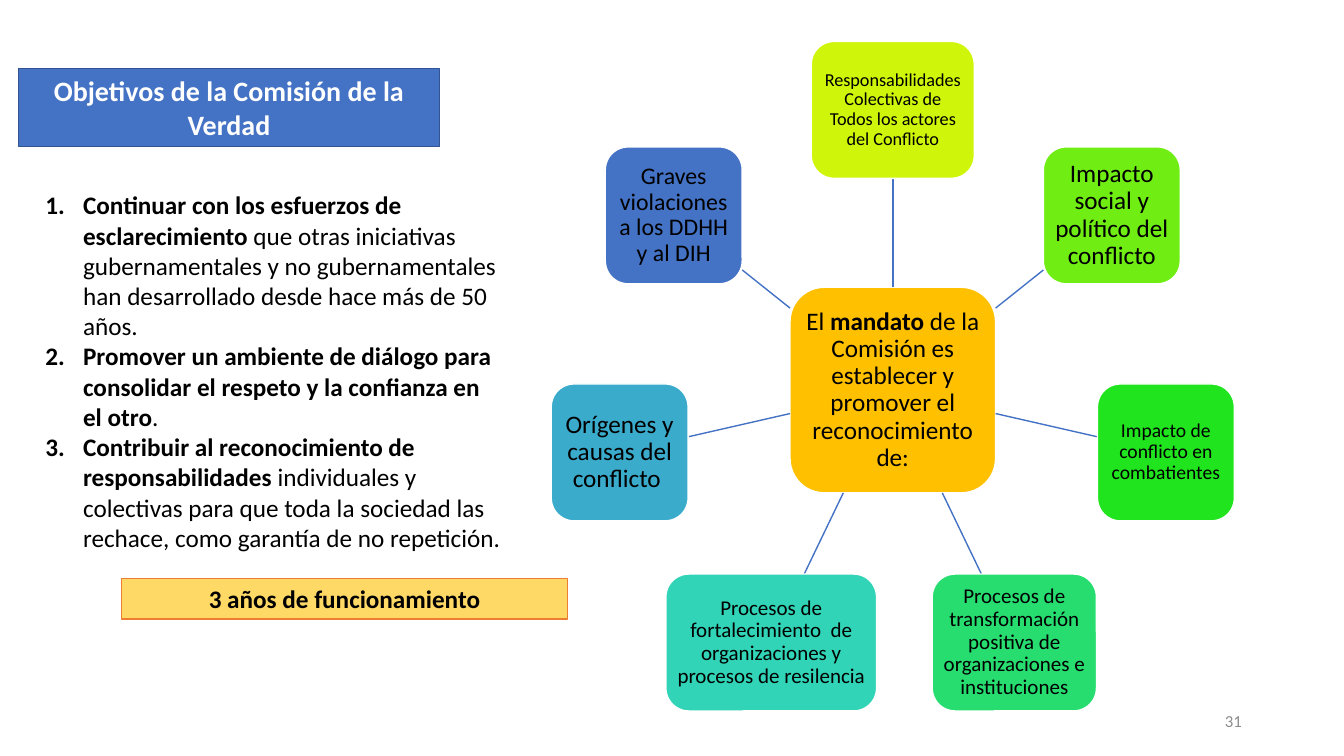
import math

import pptx
import pptx.dml.color
import pptx.enum.shapes
import pptx.enum.text
import pptx.oxml
import pptx.oxml.ns
import pptx.util

Cm = pptx.util.Cm
Pt = pptx.util.Pt
RGBColor = pptx.dml.color.RGBColor
MSO_SHAPE = pptx.enum.shapes.MSO_SHAPE
MSO_CONNECTOR = pptx.enum.shapes.MSO_CONNECTOR
MSO_ANCHOR = pptx.enum.text.MSO_ANCHOR
PP_ALIGN = pptx.enum.text.PP_ALIGN

BLACK = RGBColor(0x00, 0x00, 0x00)
WHITE = RGBColor(0xFF, 0xFF, 0xFF)
GRAY = RGBColor(0x8C, 0x8C, 0x8C)
BLUE = RGBColor(0x44, 0x72, 0xC4)
DARK_BLUE = RGBColor(0x32, 0x54, 0x91)
ORANGE = RGBColor(0xED, 0x7D, 0x31)
PALE_GOLD = RGBColor(0xFF, 0xD9, 0x66)
GOLD = RGBColor(0xFF, 0xC0, 0x00)
LIME = RGBColor(0xCF, 0xF6, 0x0A)
LIGHT_GREEN = RGBColor(0x70, 0xEE, 0x14)
GREEN = RGBColor(0x20, 0xE5, 0x1E)
EMERALD = RGBColor(0x27, 0xDD, 0x70)
TURQUOISE = RGBColor(0x31, 0xD4, 0xB6)
SKY = RGBColor(0x3B, 0xAB, 0xCC)

CENTER_X, CENTER_Y = 22.5, 9.83
RING_RADIUS = 7.06
HUB_SIZE = 5.18
NODE_SIZE = 3.45

MANDATE = [
    ("El ", False),
    ("mandato", True),
    (" de la Comisión es establecer y promover el reconocimiento de:", False),
]

TOPICS = [
    ("Responsabilidades Colectivas de Todos los actores del Conflicto", 13, 4.11, LIME),
    ("Impacto social y político del conflicto", 18, NODE_SIZE, LIGHT_GREEN),
    ("Impacto de conflicto en combatientes", 14, NODE_SIZE, GREEN),
    ("Procesos de transformación positiva de organizaciones e instituciones", 15, 4.14, EMERALD),
    ("Procesos de fortalecimiento  de organizaciones y procesos de resilencia", 15, 5.31, TURQUOISE),
    ("Orígenes y causas del conflicto ", 18, NODE_SIZE, SKY),
    ("Graves violaciones a los DDHH y al DIH", 17, NODE_SIZE, BLUE),
]

OBJECTIVES = [
    [
        ("Continuar con los esfuerzos de esclarecimiento", True),
        (" que otras iniciativas gubernamentales y no gubernamentales "
         "han desarrollado desde hace más de 50 años.", False),
    ],
    [
        ("Promover un ambiente de diálogo para consolidar el respeto "
         "y la confianza en el otro", True),
        (".", False),
    ],
    [
        ("Contribuir al reconocimiento de responsabilidades", True),
        (" individuales y colectivas para que toda la sociedad las rechace, "
         "como garantía de no repetición.", False),
    ],
]


def write_text(paragraph, text, *, font="Calibri", size=18, bold=False, color=BLACK,
               alignment=PP_ALIGN.CENTER, line_spacing=1.0):
    paragraph.alignment = alignment
    paragraph.line_spacing = line_spacing
    paragraph.space_before = Pt(0)
    pieces = [(text, bold)] if isinstance(text, str) else text
    for piece, piece_bold in pieces:
        run = paragraph.add_run()
        run.text = piece
        run.font.name = font
        run.font.size = Pt(size)
        run.font.bold = piece_bold
        run.font.color.rgb = color


class SlideBuilder:
    line_width = Pt(1)

    def __init__(self, slide):
        self.slide = slide

    def place(self, shape, left, top, width, height):
        shape.left, shape.top = Cm(left), Cm(top)
        shape.width, shape.height = Cm(width), Cm(height)

    def paint(self, shape, fill, line):
        shape.fill.solid()
        shape.fill.fore_color.rgb = fill
        shape.line.color.rgb = line
        shape.line.width = self.line_width

    def prepare_frame(self, shape, anchor=MSO_ANCHOR.MIDDLE):
        frame = shape.text_frame
        frame.word_wrap = True
        frame.auto_size = pptx.enum.text.MSO_AUTO_SIZE.NONE
        frame.vertical_anchor = anchor
        return frame

    def title(self, text, box, fill, line, **text_format):
        shape = self.slide.shapes.title
        self.place(shape, *box)
        self.paint(shape, fill, line)
        write_text(self.prepare_frame(shape).paragraphs[0], text, **text_format)

    def numbered_list(self, items, box):
        shape = self.slide.placeholders[1]
        self.place(shape, *box)
        frame = self.prepare_frame(shape, MSO_ANCHOR.TOP)
        for index, item in enumerate(items):
            paragraph = frame.add_paragraph() if index else frame.paragraphs[0]
            properties = paragraph._p.get_or_add_pPr()
            properties.set("marL", str(Cm(0.95)))
            properties.set("indent", str(Cm(-0.95)))
            numbering = pptx.oxml.parse_xml(
                f'<a:buAutoNum {pptx.oxml.ns.nsdecls("a")} type="arabicPeriod"/>')
            properties.append(numbering)
            write_text(paragraph, item, alignment=PP_ALIGN.LEFT)

    def box(self, kind, text, box, fill, line, margin=None, **text_format):
        shape = self.slide.shapes.add_shape(kind, *map(Cm, box))
        shape.shadow.inherit = False
        self.paint(shape, fill, line)
        frame = self.prepare_frame(shape)
        if margin is not None:
            frame.margin_left = frame.margin_right = Cm(margin)
            frame.margin_top = frame.margin_bottom = Cm(margin)
        write_text(frame.paragraphs[0], text, **text_format)

    def node(self, text, center_x, center_y, width, height, fill, size):
        box = (center_x - width / 2, center_y - height / 2, width, height)
        self.box(MSO_SHAPE.ROUNDED_RECTANGLE, text, box, fill, WHITE,
                 margin=0.11, size=size, line_spacing=0.9)

    def spoke(self, start, end):
        connector = self.slide.shapes.add_connector(
            MSO_CONNECTOR.STRAIGHT, *map(Cm, start + end))
        connector.line.color.rgb = BLUE
        connector.line.width = self.line_width
        connector._element.spPr.append(
            pptx.oxml.parse_xml(f'<a:effectLst {pptx.oxml.ns.nsdecls("a")}/>'))

    def label(self, text, box, **text_format):
        shape = self.slide.shapes.add_textbox(*map(Cm, box))
        write_text(self.prepare_frame(shape).paragraphs[0], text, **text_format)

    def topic_wheel(self, mandate, topics):
        self.node(mandate, CENTER_X, CENTER_Y, HUB_SIZE, HUB_SIZE, GOLD, 18)
        for index, (text, size, width, fill) in enumerate(topics):
            angle = 2 * math.pi * index / len(topics)
            across, down = math.sin(angle), -math.cos(angle)
            longest = max(abs(across), abs(down))
            from_hub = HUB_SIZE / 2 / longest
            to_node = RING_RADIUS - NODE_SIZE / 2 / longest
            start, end, center = [
                (CENTER_X + across * distance, CENTER_Y + down * distance)
                for distance in (from_hub, to_node, RING_RADIUS)]
            self.spoke(start, end)
            self.node(text, *center, width, NODE_SIZE, fill, size)


def main():
    presentation = pptx.Presentation()
    presentation.slide_width = Cm(33.87)
    presentation.slide_height = Cm(19.05)
    builder = SlideBuilder(presentation.slides.add_slide(presentation.slide_layouts[1]))
    builder.topic_wheel(MANDATE, TOPICS)
    builder.title("Objetivos de la Comisión de la Verdad", (0.46, 1.73, 10.62, 1.96),
                  BLUE, DARK_BLUE, size=20, bold=True, color=WHITE)
    builder.numbered_list(OBJECTIVES, (0.89, 4.65, 12.07, 9.5))
    builder.box(MSO_SHAPE.RECTANGLE, "3 años de funcionamiento",
                (3.07, 14.58, 11.23, 1.02), PALE_GOLD, ORANGE, bold=True)
    builder.label("31", (23.93, 17.65, 7.62, 1.02), size=12, color=GRAY,
                  alignment=PP_ALIGN.RIGHT)
    presentation.save("out.pptx")


if __name__ == "__main__":
    main()
